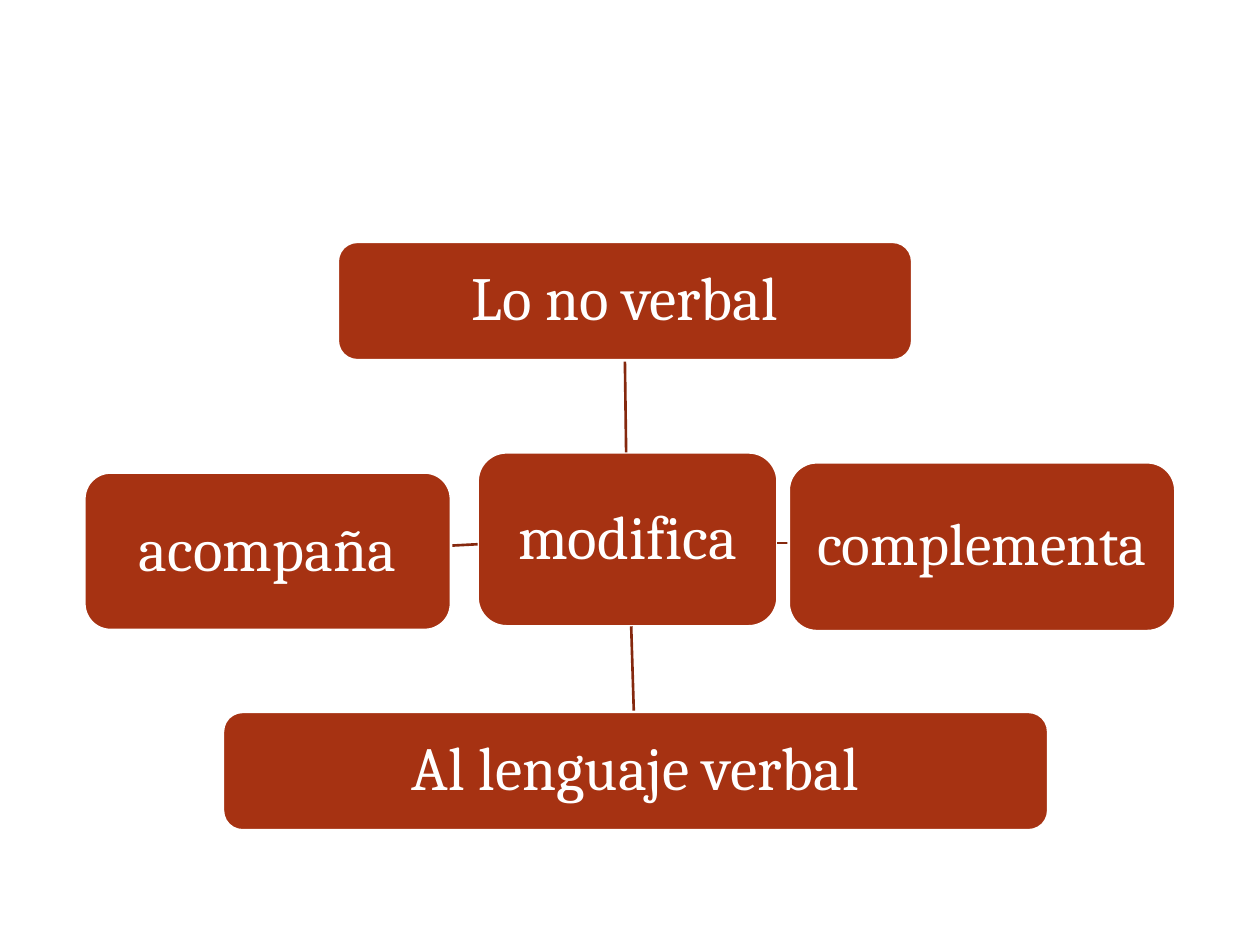
import pptx
import pptx.dml.color
import pptx.enum.shapes
import pptx.enum.text
import pptx.oxml.ns
from lxml import etree
from pptx.util import Pt

COLORS = {"box": "A63212", "connector": "85280E", "white": "FFFFFF"}
FONT = "Cambria"
LINE_WIDTH = 1.5

# text, left, top, width, height, font size: relative to the diagram
CENTER = ("modifica", 224.7, 120.3, 171.4, 99.4, 35)
# each outer box with its link from the central box: x1, y1, x2, y2
BRANCHES = [
    (("Lo no verbal", 144.8, 0, 328.3, 67.7, 35), (309.6, 120.3, 308.9, 67.7)),
    (("complementa", 402.5, 126, 221, 96.5, 34), (396, 172.1, 402.5, 172.1)),
    (("Al lenguaje verbal", 79.2, 268.6, 471.6, 67.7, 35), (312.5, 219.7, 314, 268.6)),
    (("acompaña", 0, 131.8, 209.5, 90, 35), (224.7, 172.8, 209.5, 173.6)),
]


def rgb(name):
    return pptx.dml.color.RGBColor.from_string(COLORS[name])


def add_box(slide, text, left, top, width, height, size):
    shape = slide.shapes.add_shape(
        pptx.enum.shapes.MSO_SHAPE.ROUNDED_RECTANGLE,
        Pt(left), Pt(top), Pt(width), Pt(height))
    shape.shadow.inherit = False
    shape.fill.solid()
    shape.fill.fore_color.rgb = rgb("box")
    shape.line.color.rgb = rgb("white")
    shape.line.width = Pt(LINE_WIDTH)

    frame = shape.text_frame
    frame.text = text
    frame.word_wrap = True
    frame.vertical_anchor = pptx.enum.text.MSO_ANCHOR.MIDDLE
    frame.margin_left = frame.margin_right = Pt(7)
    frame.margin_top = frame.margin_bottom = Pt(7)
    paragraph = frame.paragraphs[0]
    paragraph.alignment = pptx.enum.text.PP_ALIGN.CENTER
    paragraph.line_spacing = 0.9
    font = paragraph.runs[0].font
    font.name = FONT
    font.size = Pt(size)
    font.color.rgb = rgb("white")


def add_link(slide, x1, y1, x2, y2):
    connector = slide.shapes.add_connector(
        pptx.enum.shapes.MSO_CONNECTOR.STRAIGHT, Pt(x1), Pt(y1), Pt(x2), Pt(y2))
    connector.line.color.rgb = rgb("connector")
    connector.line.width = Pt(LINE_WIDTH)
    etree.SubElement(connector._element.spPr, pptx.oxml.ns.qn("a:effectLst"))


def add_radial_diagram(slide, left, top):
    """Place the central box and its four linked boxes from the given corner."""
    def place_box(text, x, y, width, height, size):
        add_box(slide, text, left + x, top + y, width, height, size)

    place_box(*CENTER)
    for box, (x1, y1, x2, y2) in BRANCHES:
        add_link(slide, left + x1, top + y1, left + x2, top + y2)
        place_box(*box)


def main():
    presentation = pptx.Presentation()
    presentation.slide_width = Pt(720)
    presentation.slide_height = Pt(540)
    blank_layout = presentation.slide_layouts[6]
    slide = presentation.slides.add_slide(blank_layout)
    add_radial_diagram(slide, left=48.2, top=138.2)
    presentation.save("out.pptx")


if __name__ == "__main__":
    main()
